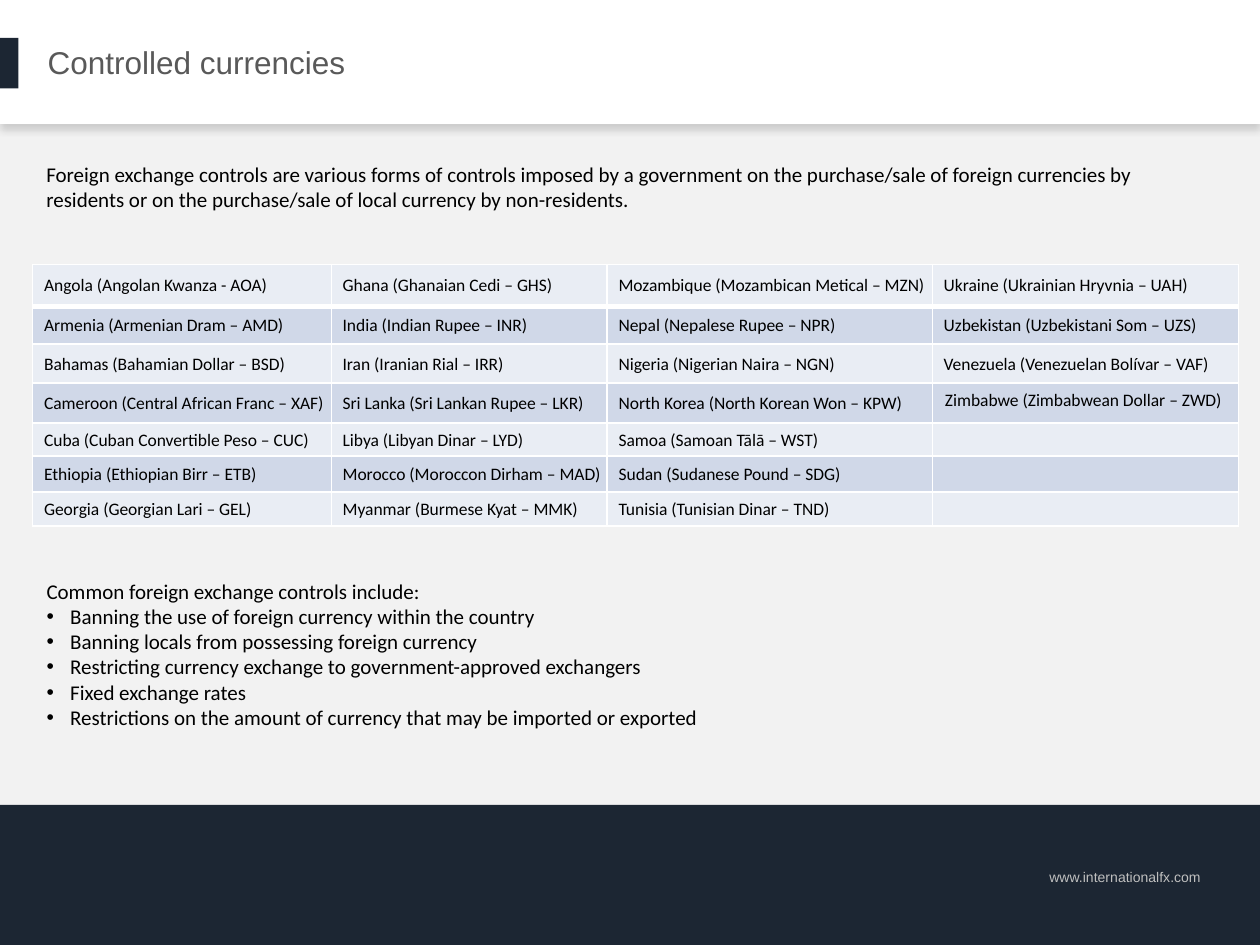
from lxml import etree
from pptx import Presentation
from pptx.dml.color import RGBColor
from pptx.enum.shapes import MSO_SHAPE
from pptx.enum.text import MSO_ANCHOR, MSO_AUTO_SIZE, PP_ALIGN
from pptx.oxml.ns import qn
from pptx.util import Pt

RECT = MSO_SHAPE.RECTANGLE
TOP, MID = MSO_ANCHOR.TOP, MSO_ANCHOR.MIDDLE
LEFT, RIGHT = PP_ALIGN.LEFT, PP_ALIGN.RIGHT
FIXED = MSO_AUTO_SIZE.NONE

WHITE = RGBColor(0xFF, 0xFF, 0xFF)
BLACK = RGBColor(0x00, 0x00, 0x00)
NAVY = RGBColor(0x1C, 0x26, 0x33)
PAPER = RGBColor(0xF2, 0xF2, 0xF2)
GREY = RGBColor(0x59, 0x59, 0x59)
SILVER = RGBColor(0xBF, 0xBF, 0xBF)
BANDS = (RGBColor(0xE9, 0xED, 0xF4), RGBColor(0xD0, 0xD8, 0xE8))

INTRO = (
    "Foreign exchange controls are various forms of controls imposed by a "
    "government on the purchase/sale of foreign currencies by residents or on "
    "the purchase/sale of local currency by non-residents."
)
LEAD = "Common foreign exchange controls include:"
RULES = [
    "Banning the use of foreign currency within the country",
    "Banning locals from possessing foreign currency",
    "Restricting currency exchange to government-approved exchangers",
    "Fixed exchange rates",
    "Restrictions on the amount of currency that may be imported or exported",
]
MONEY = [
    ["Angola (Angolan Kwanza - AOA)", "Ghana (Ghanaian Cedi – GHS)",
     "Mozambique (Mozambican Metical – MZN)", "Ukraine (Ukrainian Hryvnia – UAH)"],
    ["Armenia (Armenian Dram – AMD)", "India (Indian Rupee – INR)",
     "Nepal (Nepalese Rupee – NPR)", "Uzbekistan (Uzbekistani Som – UZS)"],
    ["Bahamas (Bahamian Dollar – BSD)", "Iran (Iranian Rial – IRR)",
     "Nigeria (Nigerian Naira – NGN)", "Venezuela (Venezuelan Bolívar – VAF)"],
    ["Cameroon (Central African Franc – XAF)", "Sri Lanka (Sri Lankan Rupee – LKR)",
     "North Korea (North Korean Won – KPW)", "Zimbabwe (Zimbabwean Dollar – ZWD)"],
    ["Cuba (Cuban Convertible Peso – CUC)", "Libya (Libyan Dinar – LYD)",
     "Samoa (Samoan Tālā – WST)", ""],
    ["Ethiopia (Ethiopian Birr – ETB)", "Morocco (Moroccon Dirham – MAD)",
     "Sudan (Sudanese Pound – SDG)", ""],
    ["Georgia (Georgian Lari – GEL)", "Myanmar (Burmese Kyat – MMK)",
     "Tunisia (Tunisian Dinar – TND)", ""],
]
WIDTHS = [170.6, 157.7, 185.8, 175]
HEIGHTS = [24, 21.7, 22.3, 22.9, 18.9, 20.6, 19.4]
LOOSE = (3, 3)


class Deck:
    """Holds the text style and the current slide."""

    def __init__(self, slide, sans="Arial", body="Calibri"):
        self.slide, self.sans, self.body = slide, sans, body
        fill = slide.background.fill
        fill.solid()
        fill.fore_color.rgb = PAPER

    def block(self, x, y, w, h, color):
        shape = self.slide.shapes.add_shape(RECT, Pt(x), Pt(y), Pt(w), Pt(h))
        shape.shadow.inherit = False
        shape.fill.solid()
        shape.fill.fore_color.rgb = color
        shape.line.fill.background()
        return shape

    def shade(self, shape, blur, drop, alpha):
        effects = shape.element.spPr.find(qn("a:effectLst"))
        cast = etree.SubElement(effects, qn("a:outerShdw"), blurRad=str(Pt(blur)),
                                dist=str(Pt(drop)), dir="5400000", algn="t", rotWithShape="0")
        tint = etree.SubElement(cast, qn("a:srgbClr"), val=str(BLACK))
        etree.SubElement(tint, qn("a:alpha"), val=str(alpha * 1000))

    def add_run(self, para, text, size, color, font, align=LEFT):
        para.alignment = align
        run = para.add_run()
        run.text = text
        run.font.size, run.font.name = Pt(size), font
        run.font.color.rgb = color

    def label(self, x, y, w, h, text, size, color, font, align=LEFT):
        frame = self.slide.shapes.add_textbox(Pt(x), Pt(y), Pt(w), Pt(h)).text_frame
        frame.word_wrap = True
        self.add_run(frame.paragraphs[0], text, size, color, font, align)

    def place(self, holder, x, y, w, h, anchor):
        holder.left, holder.top, holder.width, holder.height = Pt(x), Pt(y), Pt(w), Pt(h)
        holder.element.getparent().append(holder.element)
        frame = holder.text_frame
        frame.auto_size, frame.vertical_anchor = FIXED, anchor
        return frame

    def title(self, x, y, w, h, text):
        frame = self.place(self.slide.shapes.title, x, y, w, h, MID)
        self.add_run(frame.paragraphs[0], text, 18, GREY, self.sans)

    def bullets(self, x, y, w, h, lead, items):
        frame = self.place(self.slide.placeholders[1], x, y, w, h, TOP)
        frame.word_wrap = False
        for i, text in enumerate([lead, *items]):
            para = frame.add_paragraph() if i else frame.paragraphs[0]
            props = para._p.get_or_add_pPr()
            dent = Pt(13.5) if i else 0
            props.set("marL", str(dent))
            props.set("indent", str(-dent))
            if i:
                etree.SubElement(props, qn("a:buFont"), typeface=self.sans)
                etree.SubElement(props, qn("a:buChar"), char="•")
            else:
                etree.SubElement(props, qn("a:buNone"))
            para.space_before = Pt(0)
            self.add_run(para, text, 12, BLACK, self.body)

    def edge(self, cell, sides):
        props = cell._tc.get_or_add_tcPr()
        for side, width in sides.items():
            line = etree.SubElement(props, qn("a:ln" + side), w=str(Pt(width)))
            fill = etree.SubElement(line, qn("a:solidFill"))
            etree.SubElement(fill, qn("a:srgbClr"), val=str(WHITE))

    def table(self, x, y, widths, heights, rows):
        grid = self.slide.shapes.add_table(
            len(rows), len(widths), Pt(x), Pt(y), Pt(sum(widths)), Pt(sum(heights))).table
        for col, width in zip(grid.columns, widths):
            col.width = Pt(width)
        for r, row in enumerate(rows):
            grid.rows[r].height = Pt(heights[r])
            for c, text in enumerate(row):
                self.cell(grid.cell(r, c), text, r, (r, c) == LOOSE)

    def cell(self, cell, text, row, loose):
        self.edge(cell, {"L": 1, "R": 1, "T": 3 if row == 1 else 1, "B": 1 if row else 3})
        cell.fill.solid()
        cell.fill.fore_color.rgb = BANDS[row % 2]
        if not loose:
            cell.vertical_anchor = MID
            cell.margin_left, cell.margin_right = Pt(6.5), Pt(0.7)
            cell.margin_top, cell.margin_bottom = Pt(0.7), Pt(0)
        para = cell.text_frame.paragraphs[0]
        if text:
            self.add_run(para, text, 10, BLACK, self.body)
        else:
            etree.SubElement(para._p, qn("a:endParaRPr"), sz="1000")


def main():
    show = Presentation()
    show.slide_width, show.slide_height = Pt(720), Pt(540)
    deck = Deck(show.slides.add_slide(show.slide_layouts[1]))
    head = deck.block(0, 0, 720, 70.8, WHITE)
    deck.shade(head, 4, 3, 15)
    deck.block(0, 460, 720, 80, NAVY)
    deck.label(417.6, 492.5, 275.8, 17, "www.internationalfx.com", 8, SILVER, deck.sans, RIGHT)
    deck.block(0, 21.6, 10.6, 29, NAVY)
    deck.title(20, 21, 442, 29, "Controlled currencies")
    deck.table(18.7, 151, WIDTHS, HEIGHTS, MONEY)
    deck.label(19.4, 88.6, 663, 36, INTRO, 12, BLACK, deck.body)
    deck.bullets(19.4, 326.9, 390, 94.3, LEAD, RULES)
    show.save("out.pptx")


if __name__ == "__main__":
    main()
